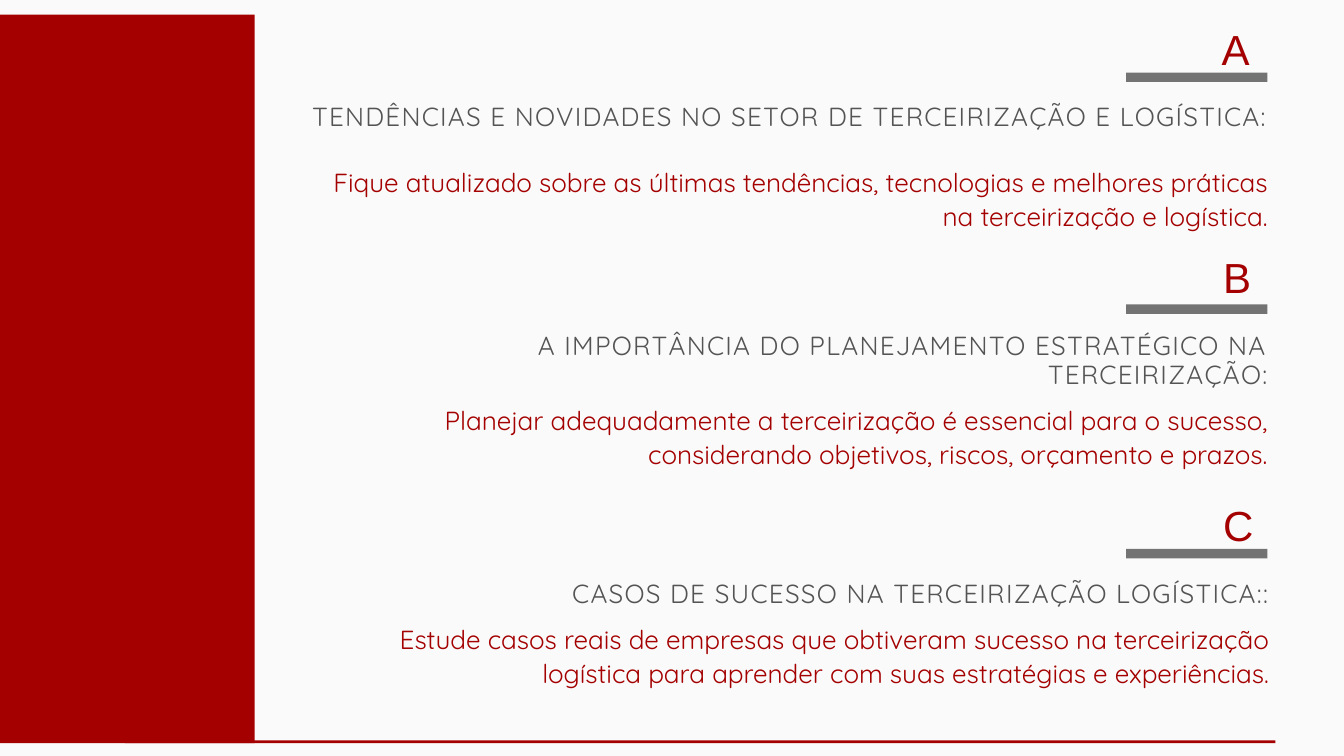
from pptx import Presentation
from pptx.dml.color import RGBColor
from pptx.enum.shapes import MSO_SHAPE
from pptx.enum.text import MSO_ANCHOR, MSO_AUTO_SIZE, PP_ALIGN
from pptx.util import Pt

RECT = MSO_SHAPE.RECTANGLE
TOP = MSO_ANCHOR.TOP
GROW = MSO_AUTO_SIZE.SHAPE_TO_FIT_TEXT
LEFT, RIGHT = PP_ALIGN.LEFT, PP_ALIGN.RIGHT

COLORS = {"paper": "FAFAFA", "red": "A40000", "gray": "737373", "ink": "545454"}

FRAME = {
    "word_wrap": True,
    "auto_size": GROW,
    "vertical_anchor": TOP,
    "margin_left": 0,
    "margin_right": 0,
    "margin_top": 0,
    "margin_bottom": 0,
}

FORMATS = {
    "letter": {
        "font": {"name": "Arial", "size": Pt(45)},
        "paragraph": {"alignment": LEFT, "line_spacing": Pt(51.3)},
        "color": "red", "spacing": -50,
    },
    "heading": {
        "font": {"name": "Quicksand", "size": Pt(28)},
        "paragraph": {"alignment": RIGHT, "line_spacing": Pt(30.8)},
        "color": "ink", "spacing": 140,
    },
    "body": {
        "font": {"name": "Quicksand", "size": Pt(28)},
        "paragraph": {"alignment": RIGHT, "line_spacing": Pt(36.4)},
        "color": "red", "spacing": 0,
    },
}

SECTIONS = [
    {
        "letter": ("A", 1309, 27.4),
        "bar_top": 77.8,
        "heading": ("TENDÊNCIAS E NOVIDADES NO SETOR DE TERCEIRIZAÇÃO E LOGÍSTICA:",
                    272.9, 110.9, 1084.3, 61.9),
        "body": ("Fique atualizado sobre as últimas tendências, tecnologias e melhores "
                 "práticas na terceirização e logística.", 344.2, 175.7, 1013.8),
    },
    {
        "letter": ("B", 1310.4, 272.2),
        "bar_top": 326.2,
        "heading": ("A IMPORTÂNCIA DO PLANEJAMENTO ESTRATÉGICO NA TERCEIRIZAÇÃO:",
                    342.7, 355.7, 1015.2, 61.9),
        "body": ("Planejar adequadamente a terceirização é essencial para o sucesso, "
                 "considerando objetivos, riscos, orçamento e prazos.",
                 342.7, 430.6, 1015.2),
    },
    {
        "letter": ("C", 1310.4, 537.8),
        "bar_top": 588.2,
        "heading": ("CASOS DE SUCESSO NA TERCEIRIZAÇÃO LOGÍSTICA::",
                    344.2, 621.4, 1015.2, 31),
        "body": ("Estude casos reais de empresas que obtiveram sucesso na terceirização "
                 "logística para aprender com suas estratégias e experiências.",
                 344.2, 665.3, 1015.2),
    },
]


def apply(target, values):
    for name, value in values.items():
        setattr(target, name, value)


class Deck:
    def __init__(self, width, height):
        self.prs = Presentation()
        apply(self.prs, {"slide_width": Pt(width), "slide_height": Pt(height)})
        self.s = None

    def color(self, name):
        return RGBColor.from_string(COLORS[name])

    def slide(self, background):
        self.s = self.prs.slides.add_slide(self.prs.slide_layouts[6])
        fill = self.s.background.fill
        fill.solid()
        fill.fore_color.rgb = self.color(background)

    def block(self, left, top, width, height, color):
        sp = self.s.shapes.add_shape(RECT, Pt(left), Pt(top), Pt(width), Pt(height))
        sp.shadow.inherit = False
        sp.fill.solid()
        sp.fill.fore_color.rgb = self.color(color)
        sp.line.fill.background()

    def text(self, text, left, top, width, height, style):
        fmt = FORMATS[style]
        sp = self.s.shapes.add_textbox(Pt(left), Pt(top), Pt(width), Pt(height))
        tf = sp.text_frame
        apply(tf, FRAME)
        p = tf.paragraphs[0]
        apply(p, fmt["paragraph"])
        r = p.add_run()
        r.text = text
        apply(r.font, fmt["font"])
        r.font.color.rgb = self.color(fmt["color"])
        if fmt["spacing"]:
            r._r.get_or_add_rPr().set("spc", str(fmt["spacing"]))

    def section(self, letter, bar_top, heading, body):
        self.text(*letter, 589, 56.2, "letter")
        self.block(1206.7, bar_top, 151.2, 10.1, "gray")
        self.text(*heading, "heading")
        self.text(*body, 71.3, "body")


def main():
    deck = Deck(1440, 810)
    deck.slide("paper")
    deck.block(0, 15.8, 272.9, 780.5, "red")
    for section in SECTIONS:
        deck.section(**section)
    deck.block(133.9, 793.4, 1232.6, 2.9, "red")
    deck.prs.save("out.pptx")


if __name__ == "__main__":
    main()
